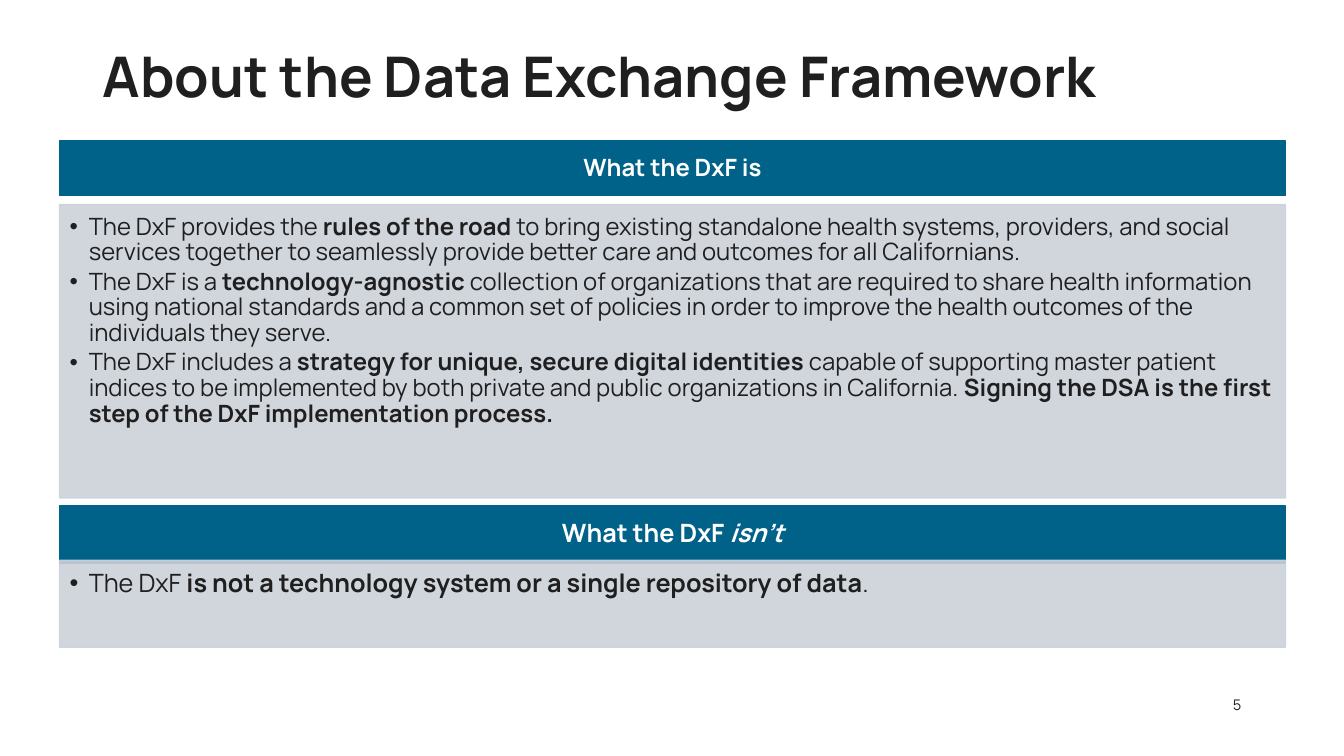
"""Build the slide that says what the Data Exchange Framework is and isn't."""
from lxml import etree
from pptx import Presentation
from pptx.dml.color import RGBColor
from pptx.enum.shapes import MSO_SHAPE as SHAPE
from pptx.enum.text import MSO_ANCHOR as ANCHOR, MSO_AUTO_SIZE as AUTO, PP_ALIGN as ALIGN
from pptx.oxml.ns import qn
from pptx.util import Inches, Pt

TITLE = "About the Data Exchange Framework"
PAGE = "5"
FONT, INK, WHITE, TEAL, GREY = "Manrope", "201F20", "FFFFFF", "006189", "CCD2DA"
LEFT, WIDTH, INDENT = 0.59, 12.16, 0.19
SECTIONS = [
    {"size": 17, "head_at": (1.4, 0.54), "body_at": (2.03, 2.91),
     "head": [("What the DxF is", "b")],
     "items": [
         [("The DxF provides the ", ""), ("rules of the road ", "b"),
          ("to bring existing standalone health systems, providers, and social services "
           "together to seamlessly provide better care and outcomes for all Californians.", "")],
         [("The DxF is a ", ""), ("technology-agnostic", "b"),
          (" collection of organizations that are required to share health information using "
           "national standards and a common set of policies in order to improve the health "
           "outcomes of the individuals they serve.", "")],
         [("The DxF includes a ", ""),
          ("strategy for unique, secure digital identities ", "b"),
          ("capable of supporting master patient indices to be implemented by both private "
           "and public organizations in California. ", ""),
          ("Signing the DSA is the first step of the DxF implementation process.", "b")],
     ]},
    {"size": 18, "head_at": (5.02, 0.57), "body_at": (5.56, 0.86),
     "head": [("What the DxF ", "b"), ("isn’t", "bi")],
     "items": [
         [("The DxF ", ""),
          ("is not a technology system or a single repository of data", "b"), (".", "")],
     ]},
]


def rgb(color):
    return RGBColor.from_string(color)


def place(sp, left, top, width, height):
    sp.left, sp.top, sp.width, sp.height = map(Inches, (left, top, width, height))


def set_frame(sp, anchor, margins):
    tf = sp.text_frame
    tf.word_wrap, tf.auto_size, tf.vertical_anchor = True, AUTO.NONE, anchor
    tf.margin_left, tf.margin_top, tf.margin_right, tf.margin_bottom = map(Inches, margins)
    return tf


def paint(sp, color, alpha=None):
    sp.fill.solid()
    sp.fill.fore_color.rgb = rgb(color)
    sp.line.color.rgb = rgb(color)
    sp.line.width = Pt(1)
    if alpha:
        for clr in sp._element.spPr.iter(qn("a:srgbClr")):
            etree.SubElement(clr, qn("a:alpha")).set("val", str(alpha * 1000))


def write(p, parts, size, color, align=ALIGN.LEFT, spacing=0.9, after=0):
    p.alignment, p.line_spacing = align, spacing
    p.space_before, p.space_after = Pt(0), Pt(after)
    for text, style in parts:
        r = p.add_run()
        r.text = text
        r.font.name, r.font.size = FONT, Pt(size)
        r.font.bold, r.font.italic = "b" in style, "i" in style
        r.font.color.rgb = rgb(color)


def add_bullet(p):
    pPr = p._p.get_or_add_pPr()
    pPr.set("marL", str(Inches(INDENT)))
    pPr.set("indent", str(-Inches(INDENT)))
    etree.SubElement(pPr, qn("a:buChar")).set("char", "•")


def add_section(s, body, section):
    size = section["size"]
    top, height = section["head_at"]
    head = s.shapes.add_shape(SHAPE.RECTANGLE, *map(Inches, (LEFT, top, WIDTH, height)))
    head.shadow.inherit = False
    paint(head, TEAL)
    tf = set_frame(head, ANCHOR.MIDDLE, (0.13, 0.08, 0.13, 0.08))
    write(tf.paragraphs[0], section["head"], size, WHITE, ALIGN.CENTER)

    top, height = section["body_at"]
    place(body, LEFT, top, WIDTH, height)
    paint(body, GREY, 90)
    s.shapes._spTree.append(body._element)
    tf = set_frame(body, ANCHOR.TOP, (0.1, 0.1, 0.13, 0.15))
    for i, parts in enumerate(section["items"]):
        p = tf.add_paragraph() if i else tf.paragraphs[0]
        add_bullet(p)
        write(p, parts, size, INK, after=size * 0.15)


def main():
    prs = Presentation()
    prs.slide_width, prs.slide_height = Inches(13.33), Inches(7.5)
    s = prs.slides.add_slide(prs.slide_layouts[3])
    title, *bodies = list(s.placeholders)[:3]

    place(title, 0.92, 0.44, 11.5, 1.45)
    tf = set_frame(title, ANCHOR.TOP, (0.1, 0.05, 0.1, 0.05))
    write(tf.paragraphs[0], [(TITLE, "b")], 40, INK)

    for body, section in zip(bodies, SECTIONS):
        add_section(s, body, section)

    page = s.shapes.add_textbox(*map(Inches, (11.93, 6.79, 0.48, 0.4)))
    tf = set_frame(page, ANCHOR.MIDDLE, (0.1, 0.05, 0.1, 0.05))
    write(tf.paragraphs[0], [(PAGE, "")], 10.5, INK, ALIGN.RIGHT, 1.0)
    prs.save("out.pptx")


if __name__ == "__main__":
    main()
